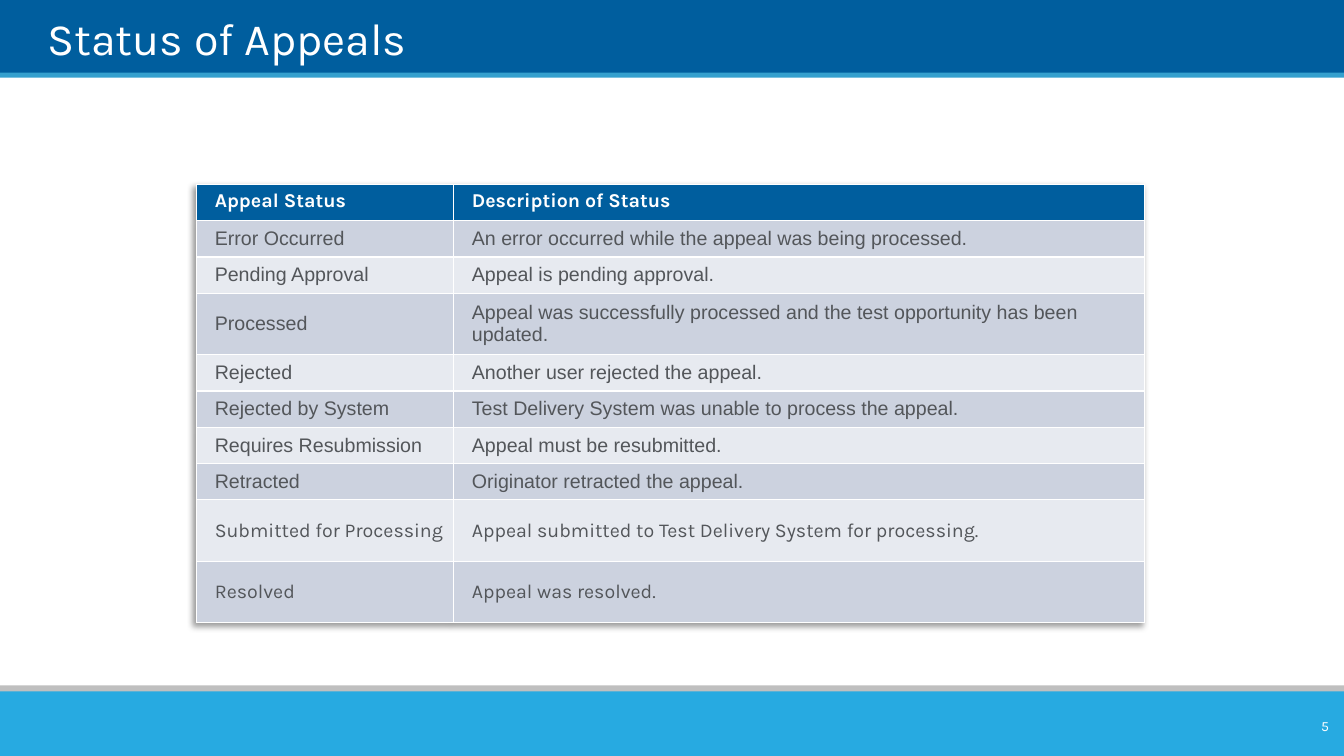
from lxml import etree
from pptx import Presentation
from pptx.dml.color import RGBColor
from pptx.enum.shapes import MSO_SHAPE
from pptx.enum.text import MSO_ANCHOR, PP_ALIGN
from pptx.util import Inches, Pt

RECT = MSO_SHAPE.RECTANGLE
TOP, MIDDLE, BOTTOM = MSO_ANCHOR.TOP, MSO_ANCHOR.MIDDLE, MSO_ANCHOR.BOTTOM
LEFT, RIGHT = PP_ALIGN.LEFT, PP_ALIGN.RIGHT
NAVY = RGBColor(0x00, 0x5E, 0x9E)
BLUE = RGBColor(0x35, 0xA0, 0xCE)
SKY = RGBColor(0x27, 0xAA, 0xE1)
GREY = RGBColor(0xBF, 0xBF, 0xBF)
DARK = RGBColor(0xCC, 0xD2, 0xDF)
LIGHT = RGBColor(0xE7, 0xEA, 0xF0)
INK = RGBColor(0x53, 0x56, 0x5A)
WHITE = RGBColor(0xFF, 0xFF, 0xFF)

SHADOW = (
    '<a:effectLst xmlns:a="http://schemas.openxmlformats.org/drawingml/2006/main">'
    '<a:outerShdw blurRad="50800" dist="38100" dir="8100000" algn="tr" rotWithShape="0">'
    '<a:srgbClr val="000000"><a:alpha val="40000"/></a:srgbClr>'
    '</a:outerShdw></a:effectLst>'
)

ROWS = [
    ("Appeal Status", "Description of Status", 0.36, "Karla"),
    ("Error Occurred", "An error occurred while the appeal was being processed.", 0.36, "Arial"),
    ("Pending Approval", "Appeal is pending approval.", 0.36, "Arial"),
    ("Processed",
     "Appeal was successfully processed and the test opportunity has been updated.", 0.61, "Arial"),
    ("Rejected", "Another user rejected the appeal.", 0.36, "Arial"),
    ("Rejected by System",
     "Test Delivery System was unable to process the appeal.", 0.36, "Arial"),
    ("Requires Resubmission", "Appeal must be resubmitted.", 0.36, "Arial"),
    ("Retracted", "Originator retracted the appeal.", 0.36, "Arial"),
    ("Submitted for Processing",
     "Appeal submitted to Test Delivery System for processing.", 0.61, "Karla"),
    ("Resolved", "Appeal was resolved.", 0.61, "Karla"),
]


def style(para, text, size, face, color, bold=False):
    para.text = text
    font = para.font
    font.size = Pt(size)
    font.name = face
    font.bold = bold
    font.color.rgb = color


def label(text, left, top, width, height, size, anchor, align, inset):
    frame = slide.shapes.add_textbox(
        Inches(left), Inches(top), Inches(width), Inches(height)).text_frame
    frame.word_wrap = True
    frame.vertical_anchor = anchor
    frame.margin_left = frame.margin_right = Inches(inset)
    frame.margin_top = frame.margin_bottom = Inches(inset / 2)
    para = frame.paragraphs[0]
    style(para, text, size, "Karla", WHITE)
    para.alignment = align


prs = Presentation()
prs.slide_width = Inches(13.33)
prs.slide_height = Inches(7.5)
slide = prs.slides.add_slide(prs.slide_layouts[6])

for top, height, color in [
    (-0.01, 0.75, NAVY), (0.72, 0.05, BLUE), (6.8, 0.14, GREY), (6.86, 0.64, SKY),
]:
    band = slide.shapes.add_shape(
        RECT, 0, Inches(top), prs.slide_width, Inches(height))
    band.shadow.inherit = False
    band.fill.solid()
    band.fill.fore_color.rgb = color
    band.line.fill.background()

label("Status of Appeals", 0.47, 0.07, 12.05, 0.57, 32, BOTTOM, LEFT, 0)

table = slide.shapes.add_table(
    len(ROWS), 2, Inches(1.95), Inches(1.83), Inches(9.4), Inches(4.37)).table
table.columns[0].width = Inches(2.55)
table.columns[1].width = Inches(6.85)
table._tbl.tblPr.insert(0, etree.fromstring(SHADOW))

for i, (status, about, height, face) in enumerate(ROWS):
    table.rows[i].height = Inches(height)
    head = i == 0
    fill = NAVY if head else DARK if i % 2 else LIGHT
    for j, text in enumerate((status, about)):
        cell = table.cell(i, j)
        cell.fill.solid()
        cell.fill.fore_color.rgb = fill
        cell.margin_left = Inches(0.18)
        cell.vertical_anchor = TOP if head else MIDDLE
        style(cell.text_frame.paragraphs[0], text, 14, face, WHITE if head else INK, head)

label("5", 12.51, 7.05, 0.77, 0.3, 10, MIDDLE, RIGHT, 0.1)

prs.save("out.pptx")
